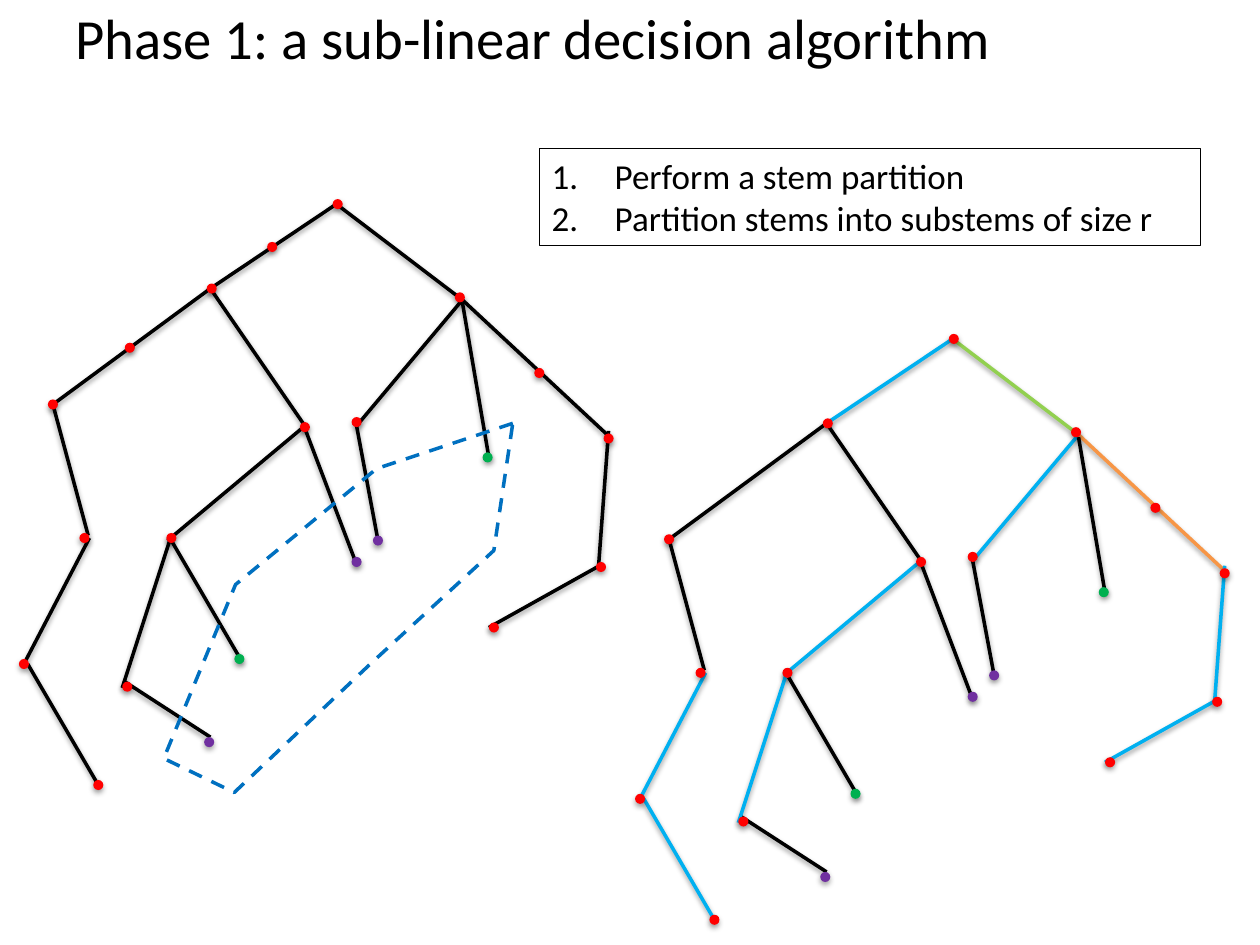
import pptx
import pptx.util
import pptx.dml.color
import pptx.enum.dml
import pptx.enum.shapes
import pptx.enum.text
import pptx.oxml
import pptx.oxml.ns

Inches = pptx.util.Inches
Pt = pptx.util.Pt
COLORS = {
    "black": "000000", "red": "FF0000", "green": "00B050", "purple": "7030A0",
    "sky": "00B0F0", "lime": "92D050", "orange": "F79646", "blue": "0070C0",
}


def rgb(name):
    return pptx.dml.color.RGBColor.from_string(COLORS[name])


def add_shadow(shape, alpha, dist):
    shape._element.spPr.append(pptx.oxml.parse_xml(
        f'<a:effectLst {pptx.oxml.ns.nsdecls("a")}>'
        f'<a:outerShdw blurRad="{Pt(3.1)}" dist="{Pt(dist)}" dir="5400000" rotWithShape="0">'
        f'<a:srgbClr val="{COLORS["black"]}"><a:alpha val="{alpha * 1000}"/></a:srgbClr>'
        '</a:outerShdw></a:effectLst>'))


prs = pptx.Presentation()
prs.slide_width, prs.slide_height = Inches(10), Inches(7.5)
s = prs.slides.add_slide(prs.slide_layouts[6])

title = s.shapes.add_textbox(Inches(0.5), Inches(-0.01), Inches(8.83), Inches(0.6))
tf = title.text_frame
tf.text = "Phase 1: a sub-linear decision algorithm"
tf.vertical_anchor = pptx.enum.text.MSO_ANCHOR.MIDDLE

steps = s.shapes.add_textbox(Inches(4.28), Inches(1.18), Inches(5.25), Inches(0.77))
steps.line.color.rgb = rgb("black")
steps.line.width = Pt(0.75)
steps.text_frame.text = "Perform a stem partition\nPartition stems into substems of size r"
for p in steps.text_frame.paragraphs:
    pPr = p._p.get_or_add_pPr()
    pPr.set("marL", str(Inches(0.5)))
    pPr.set("indent", str(Inches(-0.5)))
    pPr.append(pptx.oxml.parse_xml(
        f'<a:buAutoNum {pptx.oxml.ns.nsdecls("a")} type="arabicPeriod"/>'))

for sp, size in ((title, 32.4), (steps, 20)):
    sp.text_frame.word_wrap = True
    for p in sp.text_frame.paragraphs:
        for r in p.runs:
            r.font.name = "Calibri"
            r.font.size = Pt(size)
            r.font.color.rgb = rgb("black")

EDGES = [
    (2.67, 1.62, 1.67, 2.29, "sky"),
    (2.67, 1.62, 3.67, 2.38, "lime"),
    (1.67, 2.29, 0.42, 3.21, "black"),
    (1.67, 2.29, 2.42, 3.38, "black"),
    (3.67, 2.38, 2.83, 3.38, "sky"),
    (3.67, 2.38, 4.83, 3.46, "orange"),
    (2.42, 3.38, 1.33, 4.29, "sky"),
    (2.42, 3.4, 2.83, 4.48, "black"),
    (2.83, 3.38, 3, 4.29, "black"),
    (3.67, 2.4, 3.88, 3.63, "black"),
    (4.83, 3.42, 4.75, 4.5, "sky"),
    (4.74, 4.5, 3.88, 4.98, "sky"),
    (1.36, 4.29, 1.92, 5.25, "black"),
    (0.42, 3.21, 0.7, 4.25, "black"),
    (0.71, 4.27, 0.2, 5.25, "sky"),
    (0.22, 5.27, 0.78, 6.23, "sky"),
    (1.67, 5.85, 0.99, 5.41, "black"),
    (1.36, 4.25, 0.97, 5.46, "sky"),
]
NODES = {
    "purple": [(2.96, 4.25), (2.79, 4.42), (1.62, 5.85)],
    "green": [(1.86, 5.19), (3.83, 3.59)],
    "red": [
        (0.63, 4.23), (1.64, 2.25), (0.38, 3.17), (0.15, 5.23), (0.74, 6.19),
        (2.38, 3.35), (1.32, 4.23), (0.97, 5.41), (2.64, 1.58), (3.61, 2.32),
        (2.79, 3.31), (4.79, 3.44), (4.73, 4.46), (3.88, 4.94), (4.24, 2.92),
    ],
}
LEFT_ONLY = [(0.99, 2.72), (2.12, 1.92)]
NODE_SIZE = Inches(0.08)

for dx, dy, partitioned in ((0, 0, False), (4.89, 1.07, True)):
    for x1, y1, x2, y2, color in EDGES:
        edge = s.shapes.add_connector(
            pptx.enum.shapes.MSO_CONNECTOR.STRAIGHT,
            Inches(x1 + dx), Inches(y1 + dy), Inches(x2 + dx), Inches(y2 + dy))
        edge.line.color.rgb = rgb(color if partitioned else "black")
        edge.line.width = Pt(2)
        add_shadow(edge, 38, 1.6)
    for color, points in NODES.items():
        if color == "red" and not partitioned:
            points = points + LEFT_ONLY
        for x, y in points:
            node = s.shapes.add_shape(
                pptx.enum.shapes.MSO_SHAPE.FLOWCHART_CONNECTOR,
                Inches(x + dx), Inches(y + dy), NODE_SIZE, NODE_SIZE)
            node.fill.solid()
            node.fill.fore_color.rgb = rgb(color)
            node.line.fill.background()
            add_shadow(node, 35, 1.8)

REGION = [(4.07, 3.36), (2.99, 3.72), (1.87, 4.64), (1.3, 6.02),
          (1.86, 6.29), (2.94, 5.27), (3.92, 4.37)]
points = [(Inches(x), Inches(y)) for x, y in REGION]
builder = s.shapes.build_freeform(*points[0])
builder.add_line_segments(points[1:], close=True)
region = builder.convert_to_shape()
region.shadow.inherit = False
region.fill.background()
region.line.color.rgb = rgb("blue")
region.line.width = Pt(2)
region.line.dash_style = pptx.enum.dml.MSO_LINE.DASH

prs.save("out.pptx")
